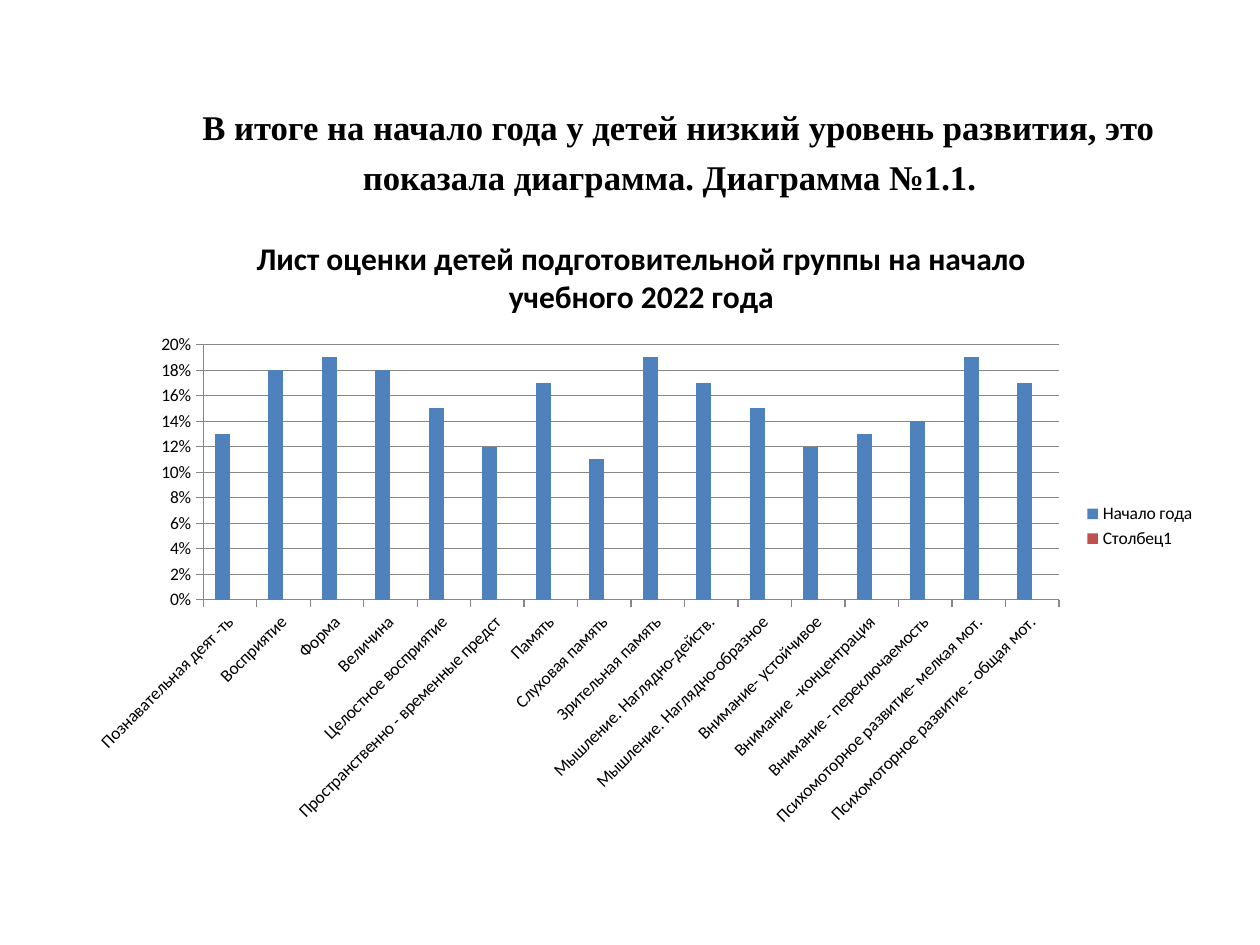
from pptx import Presentation
from pptx.chart.data import CategoryChartData
from pptx.dml.color import RGBColor
from pptx.enum.chart import XL_CHART_TYPE, XL_LEGEND_POSITION, XL_TICK_MARK
from pptx.enum.text import MSO_ANCHOR, MSO_AUTO_SIZE, PP_ALIGN
from pptx.util import Pt

COLUMNS = XL_CHART_TYPE.COLUMN_CLUSTERED
LEGEND_RIGHT = XL_LEGEND_POSITION.RIGHT
TICK_OUTSIDE = XL_TICK_MARK.OUTSIDE
TOP = MSO_ANCHOR.TOP
NO_AUTOSIZE = MSO_AUTO_SIZE.NONE
CENTER = PP_ALIGN.CENTER

BLACK = RGBColor(0x00, 0x00, 0x00)
BLUE = RGBColor(0x4F, 0x81, 0xBD)
RED = RGBColor(0xC0, 0x50, 0x4D)
GRAY = RGBColor(0x87, 0x87, 0x87)

TITLE_BOX = (70.5, 26, 624, 46)
CHART_BOX = (42.5, 122.5, 648, 356.5)
TITLE_FONT = {"name": "Times New Roman", "size": Pt(19.8), "bold": True}
CHART_FONT = {"name": "Calibri", "size": Pt(10), "bold": False}
CHART_TITLE_FONT = {"name": "Calibri", "size": Pt(18), "bold": True}

TITLE = ("В итоге на начало года у детей низкий уровень развития, "
         "это показала диаграмма. Диаграмма №1.1.")
CHART_TITLE = ("Лист оценки детей подготовительной группы на начало\n"
               "учебного 2022 года")
SCORES = {
    "Познавательная деят -ть": 0.13,
    "Восприятие": 0.18,
    "Форма": 0.19,
    "Величина": 0.18,
    "Целостное восприятие": 0.15,
    "Пространственно - временные предст": 0.12,
    "Память": 0.17,
    "Слуховая память": 0.11,
    "Зрительная память": 0.19,
    "Мышление. Наглядно-действ.": 0.17,
    "Мышление. Наглядно-образное": 0.15,
    "Внимание- устойчивое": 0.12,
    "Внимание  -концентрация": 0.13,
    "Внимание - переключаемость": 0.14,
    "Психомоторное развитие- мелкая мот.": 0.19,
    "Психомоторное развитие - общая мот.": 0.17,
}


def set_values(target, values):
    """Set every attribute of a dict on the target."""
    for name, value in values.items():
        setattr(target, name, value)


def set_font(font, values):
    """Apply font values and black text colour."""
    set_values(font, values)
    font.color.rgb = BLACK


def place_title(page, box):
    """Place and format the title placeholder, with its text low in the box."""
    title = page.shapes.title
    set_values(title, dict(zip(("left", "top", "width", "height"), map(Pt, box))))
    frame = title.text_frame
    frame.text = TITLE
    set_values(frame, {"word_wrap": True, "auto_size": NO_AUTOSIZE,
                       "vertical_anchor": TOP, "margin_top": Pt(30)})
    para = frame.paragraphs[0]
    set_values(para, {"alignment": CENTER, "line_spacing": 1.2})
    para._p.get_or_add_pPr().set("indent", str(Pt(10)))
    set_font(para.runs[0].font, TITLE_FONT)


def format_axes(chart):
    """Format both axes, the gridlines and the slanted category labels."""
    category, value = chart.category_axis, chart.value_axis
    for axis in (category, value):
        set_values(axis, {"major_tick_mark": TICK_OUTSIDE})
        set_font(axis.tick_labels.font, CHART_FONT)
        set_values(axis.format.line, {"width": Pt(0.75)})
        axis.format.line.color.rgb = GRAY
    category.tick_labels.font._element.getparent().getparent().getparent().find(
        "{*}bodyPr").set("rot", "-2700000")
    set_values(value, {"minimum_scale": 0, "maximum_scale": 0.2,
                       "major_unit": 0.02, "has_major_gridlines": True})
    set_values(value.tick_labels, {"number_format": "0%",
                                   "number_format_is_linked": False})
    grid = value.major_gridlines.format.line
    grid.width = Pt(0.75)
    grid.color.rgb = GRAY


def place_chart(page, box):
    """Place the column chart with its title, legend and series colours."""
    data = CategoryChartData(number_format="0%")
    data.categories = list(SCORES)
    data.add_series("Начало года", list(SCORES.values()))
    data.add_series("Столбец1", [None] * len(SCORES))
    chart = page.shapes.add_chart(COLUMNS, *map(Pt, box), data).chart
    set_font(chart.font, CHART_FONT)
    set_values(chart, {"has_title": True, "has_legend": True})
    heading = chart.chart_title.text_frame
    heading.text = CHART_TITLE
    for para in heading.paragraphs:
        para.alignment = CENTER
        set_font(para.runs[0].font, CHART_TITLE_FONT)
    set_values(chart.legend, {"position": LEGEND_RIGHT,
                              "include_in_layout": False})
    set_font(chart.legend.font, CHART_FONT)
    plot = chart.plots[0]
    set_values(plot, {"gap_width": 150, "overlap": 0, "vary_by_categories": False})
    for series, color in zip(plot.series, (BLUE, RED)):
        series.format.fill.solid()
        series.format.fill.fore_color.rgb = color
    format_axes(chart)


def main():
    """Build the deck and save it."""
    deck = Presentation()
    set_values(deck, {"slide_width": Pt(720), "slide_height": Pt(540)})
    page = deck.slides.add_slide(deck.slide_layouts[5])
    place_title(page, TITLE_BOX)
    place_chart(page, CHART_BOX)
    deck.save("out.pptx")


if __name__ == "__main__":
    main()
